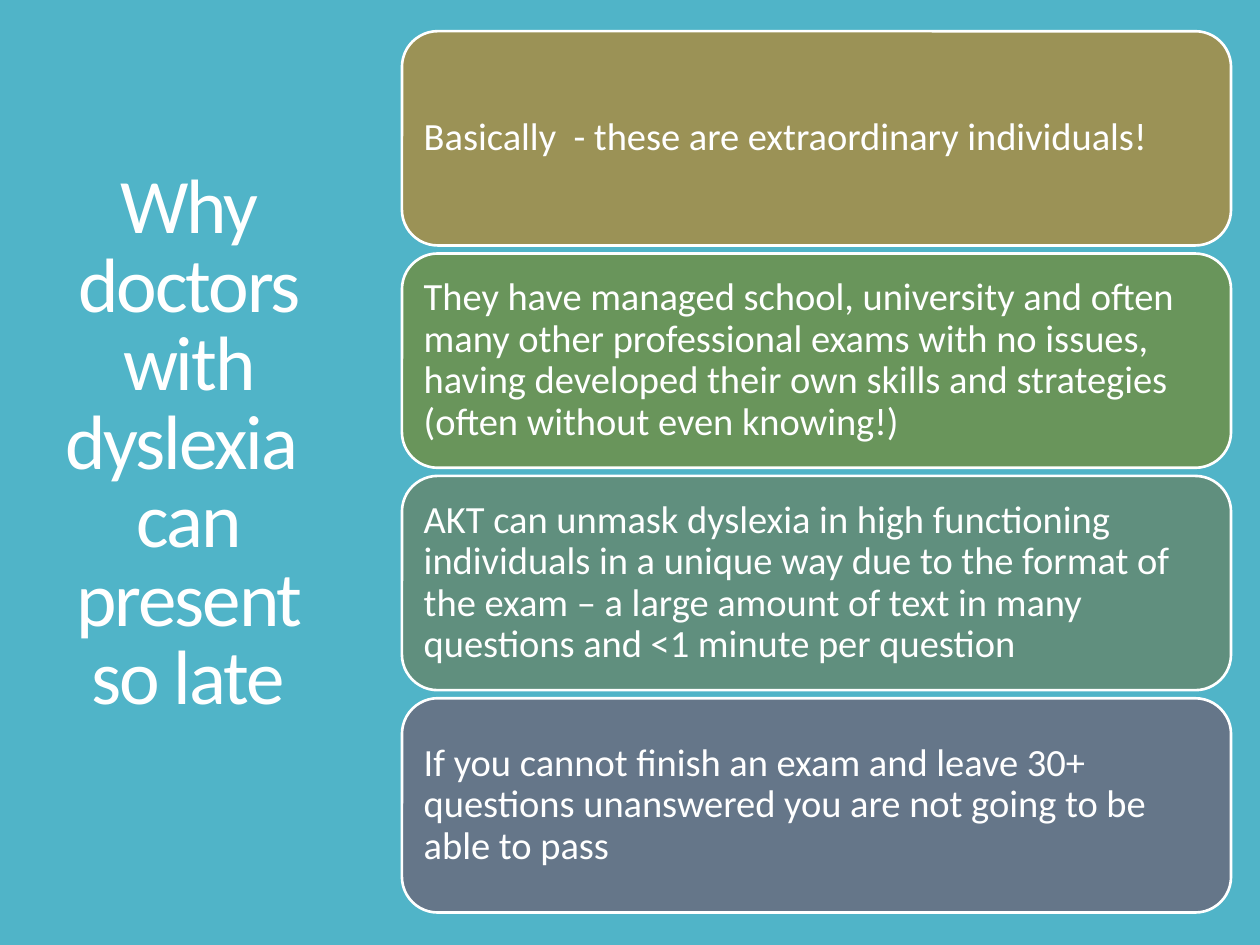
from pptx import Presentation
from pptx.dml.color import RGBColor
from pptx.enum.shapes import MSO_SHAPE
from pptx.enum.text import MSO_ANCHOR, MSO_AUTO_SIZE, PP_ALIGN
from pptx.util import Inches, Pt

BACKDROP = "50B4C8"
REASONS = [
    ("9B9256", "Basically  - these are extraordinary individuals!"),
    ("69955B", "They have managed school, university and often many other professional "
               "exams with no issues, having developed their own skills and strategies "
               "(often without even knowing!)"),
    ("608F7E", "AKT can unmask dyslexia in high functioning individuals in a unique way "
               "due to the format of the exam – a large amount of text in many questions "
               "and <1 minute per question"),
    ("657689", "If you cannot finish an exam and leave 30+ questions unanswered you are "
               "not going to be able to pass"),
]


def colour(code):
    """Turn a hex string into a colour."""
    return RGBColor.from_string(code)


class Deck:
    """Holds the style and the current slide, laid out in percent of its size."""

    font = "Calibri"
    ink = "FFFFFF"

    def __init__(self, width, height):
        """Start a presentation of the given size in inches."""
        self.show = Presentation()
        self.show.slide_width, self.show.slide_height = Inches(width), Inches(height)
        self.slide = None

    def add_slide(self, backdrop):
        """Open a title-only slide on a plain background."""
        self.slide = self.show.slides.add_slide(self.show.slide_layouts[5])
        fill = self.slide.background.fill
        fill.solid()
        fill.fore_color.rgb = colour(backdrop)

    def area(self, left, top, width, height):
        """Convert percentages of the slide into lengths."""
        across, down = self.show.slide_width / 100, self.show.slide_height / 100
        return [round(length) for length in
                (left * across, top * down, width * across, height * down)]

    def add_text(self, frame, wording, size, align, spacing):
        """Fill a frame with one vertically centred paragraph."""
        frame.word_wrap = True
        frame.auto_size = MSO_AUTO_SIZE.NONE
        frame.vertical_anchor = MSO_ANCHOR.MIDDLE
        paragraph = frame.paragraphs[0]
        paragraph.alignment = align
        paragraph.line_spacing = spacing
        run = paragraph.add_run()
        run.text = wording
        run.font.name, run.font.size = self.font, Pt(size)
        run.font.color.rgb = colour(self.ink)
        return run

    def title(self, wording, *place):
        """Move the title placeholder and fill it with tight letters."""
        heading = self.slide.shapes.title
        heading.left, heading.top, heading.width, heading.height = self.area(*place)
        run = self.add_text(heading.text_frame, wording, 44, PP_ALIGN.CENTER, 0.85)
        run.font._element.set("spc", "-120")

    def card(self, wording, fill, *place):
        """Add a rounded, outlined card with left-aligned text."""
        card = self.slide.shapes.add_shape(MSO_SHAPE.ROUNDED_RECTANGLE, *self.area(*place))
        card.shadow.inherit = False
        card.fill.solid()
        card.fill.fore_color.rgb = colour(fill)
        card.line.color.rgb = colour(self.ink)
        card.line.width = Pt(1.5)
        frame = card.text_frame
        frame.margin_left = frame.margin_right = Inches(0.09)
        frame.margin_top = frame.margin_bottom = Inches(0.09)
        self.add_text(frame, wording, 22, PP_ALIGN.LEFT, 0.9)


def main():
    """Build the slide and save it."""
    deck = Deck(10, 7.5)
    deck.add_slide(BACKDROP)
    deck.title("Why doctors with dyslexia  can present so late", 2.7, 9.3, 24.5, 75.7)
    top, height, pitch = 3.3, 22.67, 23.53
    for row, (fill, reason) in enumerate(REASONS):
        deck.card(reason, fill, 31.9, top + row * pitch, 65.8, height)
    deck.show.save("out.pptx")


if __name__ == "__main__":
    main()
